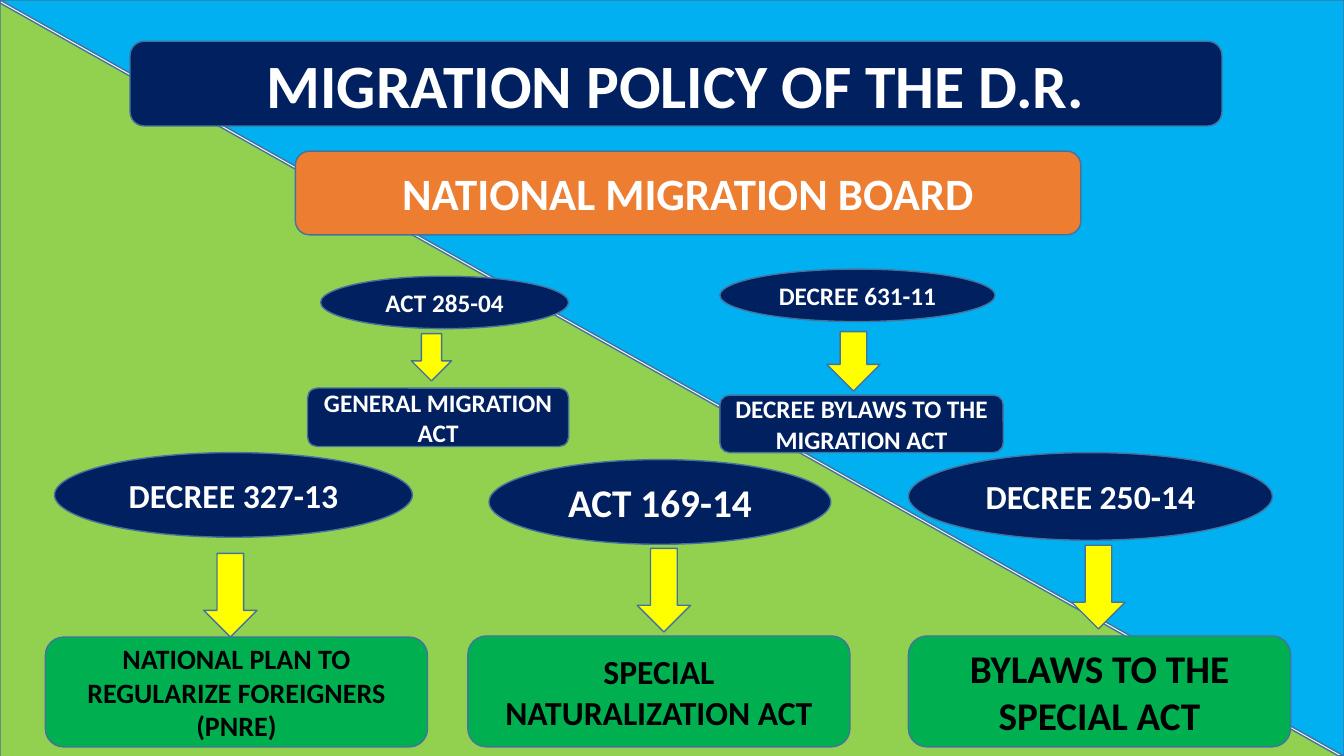
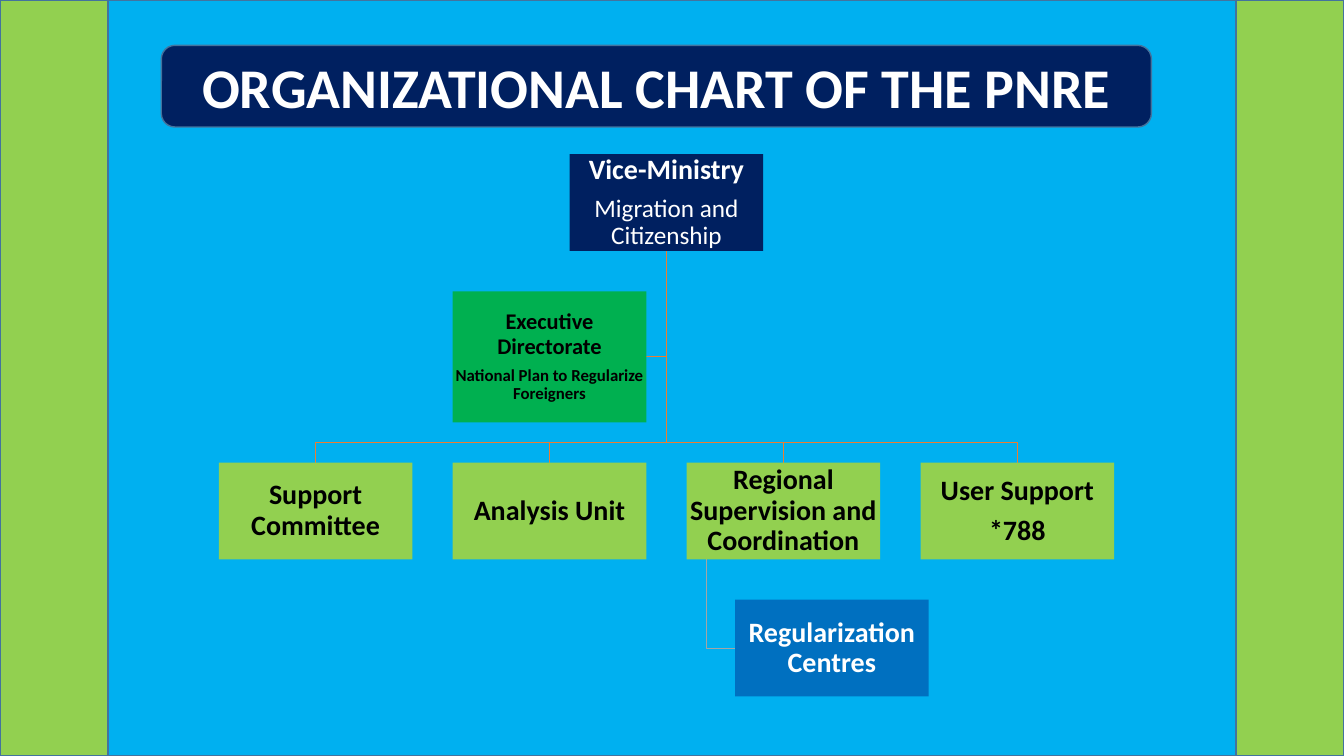
from collections import namedtuple
from dataclasses import dataclass

from pptx import Presentation
from pptx.dml.color import RGBColor
from pptx.enum.shapes import MSO_SHAPE
from pptx.enum.text import MSO_ANCHOR, PP_ALIGN
from pptx.util import Inches, Pt

RECT = MSO_SHAPE.RECTANGLE
ROUNDED = MSO_SHAPE.ROUNDED_RECTANGLE
OVAL = MSO_SHAPE.OVAL
DOWN_ARROW = MSO_SHAPE.DOWN_ARROW
TRIANGLE = MSO_SHAPE.RIGHT_TRIANGLE
CENTER = PP_ALIGN.CENTER
MIDDLE = MSO_ANCHOR.MIDDLE

Box = namedtuple("Box", "left top width height")
Line = namedtuple("Line", "text size bold", defaults=(True,))
Law = namedtuple("Law", "box name oval arrow act act_height")


@dataclass(frozen=True)
class Theme:
    """Colours, type sizes and line widths shared by both slides."""
    font: str = "Calibri"
    navy: str = "002060"
    sky: str = "00B0F0"
    lime: str = "92D050"
    green: str = "00B050"
    orange: str = "ED7D31"
    yellow: str = "FFFF00"
    blue: str = "0070C0"
    gray: str = "A5A5A5"
    outline: str = "43739E"
    white: str = "FFFFFF"
    black: str = "000000"
    outline_width: float = 1
    branch_width: float = 0.5
    huge: int = 44
    title: int = 40
    heading: int = 32
    large: int = 28
    medium: int = 24
    body: int = 20
    small: int = 18
    minor: int = 16
    tiny: int = 12


THEME = Theme()
PAGE = Box(0, 0, 13.33, 7.5)

MINOR_LAWS = (
    Law(Box(3.05, 2.74, 2.59, 1.69), Line("ACT 285-04", THEME.small),
        (0.13, 2.46, 0.52), Box(1.03, 0.57, 0.4, 0.47),
        Line("GENERAL MIGRATION ACT", THEME.small), 0.58),
    Law(Box(7.14, 2.67, 2.81, 1.82), Line("DECREE 631-11", THEME.small),
        (0, 2.73, 0.52), Box(1.06, 0.62, 0.53, 0.59),
        Line("DECREE BYLAWS TO THE MIGRATION ACT", THEME.small), 0.57),
)
MAJOR_LAWS = (
    Law(Box(0.45, 4.49, 3.79, 2.92), Line("DECREE 327-13", THEME.medium),
        (0.09, 3.55, 0.84), Box(1.57, 1, 0.53, 0.83),
        Line("NATIONAL PLAN TO REGULARIZE FOREIGNERS (PNRE)", THEME.body), 1.09),
    Law(Box(4.64, 4.56, 3.79, 2.85), Line("ACT 169-14", THEME.large),
        (0.21, 3.39, 0.84), Box(1.68, 0.88, 0.53, 0.83),
        Line("SPECIAL NATURALIZATION ACT", THEME.medium), 1.1),
    Law(Box(9.01, 4.49, 3.79, 2.92), Line("DECREE 250-14", THEME.medium),
        (0, 3.61, 0.87), Box(1.62, 0.92, 0.53, 0.83),
        Line("BYLAWS TO THE SPECIAL ACT", THEME.large), 1.1),
)
UNITS = (
    (Line("Support Committee", THEME.body),),
    (Line("Analysis Unit", THEME.body),),
    (Line("Regional Supervision and Coordination", THEME.body),),
    (Line("User Support", THEME.body), Line("*788", THEME.body)),
)


def rgb(code):
    """Turn a hex code into a colour."""
    return RGBColor.from_string(code)


def add_block(slide, kind, box, fill, outlined=True):
    """Draw one filled shape in its box."""
    block = slide.shapes.add_shape(kind, *map(Inches, box))
    block.shadow.inherit = False
    block.fill.solid()
    block.fill.fore_color.rgb = rgb(fill)
    if outlined:
        block.line.color.rgb = rgb(THEME.outline)
        block.line.width = Pt(THEME.outline_width)
    else:
        block.line.fill.background()
    return block


def write_lines(block, lines, color):
    """Write centred paragraphs into a shape and return its text frame."""
    frame = block.text_frame
    frame.word_wrap = True
    frame.vertical_anchor = MIDDLE
    for index, line in enumerate(lines):
        paragraph = frame.paragraphs[0] if index == 0 else frame.add_paragraph()
        paragraph.alignment = CENTER
        run = paragraph.add_run()
        run.text = line.text
        run.font.name = THEME.font
        run.font.size = Pt(line.size)
        run.font.bold = line.bold
        run.font.color.rgb = rgb(color)
    return frame


def add_label(slide, kind, box, fill, line, color=THEME.white):
    """Draw an outlined shape holding one line of text."""
    write_lines(add_block(slide, kind, box, fill), (line,), color)


def add_title(slide, box, text, size):
    """Draw the navy title band."""
    add_label(slide, ROUNDED, box, THEME.navy, Line(text, size))


def add_law(slide, law, act_fill, act_color):
    """Place a law's oval, its arrow and the act it leads to."""
    left, top, width, height = law.box
    oval_left, oval_width, oval_height = law.oval
    add_label(slide, OVAL, Box(left + oval_left, top, oval_width, oval_height),
              THEME.navy, law.name)
    arrow = law.arrow
    add_block(slide, DOWN_ARROW,
              arrow._replace(left=left + arrow.left, top=top + arrow.top), THEME.yellow)
    act_top = top + height - law.act_height
    add_label(slide, ROUNDED, Box(left, act_top, width, law.act_height),
              act_fill, law.act, act_color)


def add_unit(slide, box, fill, lines, color=THEME.black):
    """Draw one box of the organizational chart."""
    unit = add_block(slide, RECT, box, fill, outlined=False)
    frame = write_lines(unit, lines, color)
    frame.margin_left = frame.margin_right = Inches(0.01)
    frame.margin_top = frame.margin_bottom = Inches(0.01)
    for paragraph, line in zip(frame.paragraphs, lines):
        paragraph.line_spacing = 0.9
        paragraph.space_after = Pt(0.35 * line.size)


def add_branch(slide, points, color=THEME.orange):
    """Draw a thin bent line through the given points."""
    start, *bends = [tuple(map(Inches, point)) for point in points]
    builder = slide.shapes.build_freeform(*start)
    builder.add_line_segments(bends, close=False)
    branch = builder.convert_to_shape()
    branch.shadow.inherit = False
    branch.fill.background()
    branch.line.color.rgb = rgb(color)
    branch.line.width = Pt(THEME.branch_width)


def add_org_chart(slide, box):
    """Place the chart's four columns and four levels in its box."""
    gap = 0.4
    columns = len(UNITS)
    unit_width = (box.width - gap * (columns - 1)) / columns
    unit_height = unit_width / 2
    lefts = [box.left + index * (unit_width + gap) for index in range(columns)]
    middle = box.left + box.width / 2
    ministry_bottom = box.top + unit_height
    directorate_top = ministry_bottom + gap
    directorate_height = 1.3
    directorate_middle = directorate_top + directorate_height / 2
    units_top = directorate_top + directorate_height + gap
    units_bottom = units_top + unit_height
    centres_top = units_bottom + gap
    centres_middle = centres_top + unit_height / 2
    centres_left = lefts[2] + unit_width / 4
    bus = units_top - gap / 2
    hook = lefts[2] + unit_width / 10

    add_branch(slide, ((middle, ministry_bottom), (middle, directorate_middle),
                       (lefts[1] + unit_width, directorate_middle)))
    for left in lefts:
        center = left + unit_width / 2
        add_branch(slide, ((middle, ministry_bottom), (middle, bus),
                           (center, bus), (center, units_top)))
    add_branch(slide, ((hook, units_bottom), (hook, centres_middle),
                       (centres_left, centres_middle)), THEME.gray)

    add_unit(slide, Box(middle - unit_width / 2, box.top, unit_width, unit_height),
             THEME.navy,
             (Line("Vice-Ministry", THEME.body),
              Line("Migration and Citizenship", THEME.small, False)), THEME.white)
    add_unit(slide, Box(lefts[1], directorate_top, unit_width, directorate_height),
             THEME.green,
             (Line("Executive Directorate", THEME.minor),
              Line("National Plan to Regularize Foreigners", THEME.tiny)))
    for left, lines in zip(lefts, UNITS):
        add_unit(slide, Box(left, units_top, unit_width, unit_height), THEME.lime, lines)
    add_unit(slide, Box(centres_left, centres_top, unit_width, unit_height), THEME.blue,
             (Line("Regularization Centres", THEME.body),), THEME.white)


def build_policy(slide):
    """Build the migration policy slide."""
    add_block(slide, RECT, PAGE, THEME.white)
    add_block(slide, TRIANGLE, PAGE, THEME.sky).rotation = 180
    add_block(slide, TRIANGLE, PAGE._replace(top=0.03), THEME.lime)
    add_title(slide, Box(1.29, 0.41, 10.83, 0.84), "MIGRATION POLICY OF THE D.R.", THEME.huge)
    add_label(slide, ROUNDED, Box(2.93, 1.5, 7.79, 0.83), THEME.orange,
              Line("NATIONAL MIGRATION BOARD", THEME.heading))
    for law in MINOR_LAWS:
        add_law(slide, law, THEME.navy, THEME.white)
    for law in MAJOR_LAWS:
        add_law(slide, law, THEME.green, THEME.black)


def build_organization(slide):
    """Build the organizational chart slide."""
    add_block(slide, RECT, PAGE, THEME.sky)
    add_title(slide, Box(1.6, 0.45, 9.82, 0.81), "ORGANIZATIONAL CHART OF THE PNRE", THEME.title)
    add_org_chart(slide, Box(2.17, 1.53, 8.88, 5.39))
    band_width = 1.07
    for left in (0, PAGE.width - band_width):
        add_block(slide, RECT, PAGE._replace(left=left, width=band_width), THEME.lime)


def main():
    """Create the presentation and save it."""
    deck = Presentation()
    deck.slide_width, deck.slide_height = Inches(PAGE.width), Inches(PAGE.height)
    blank = deck.slide_layouts[6]
    for build in (build_policy, build_organization):
        build(deck.slides.add_slide(blank))
    deck.save("out.pptx")


if __name__ == "__main__":
    main()
